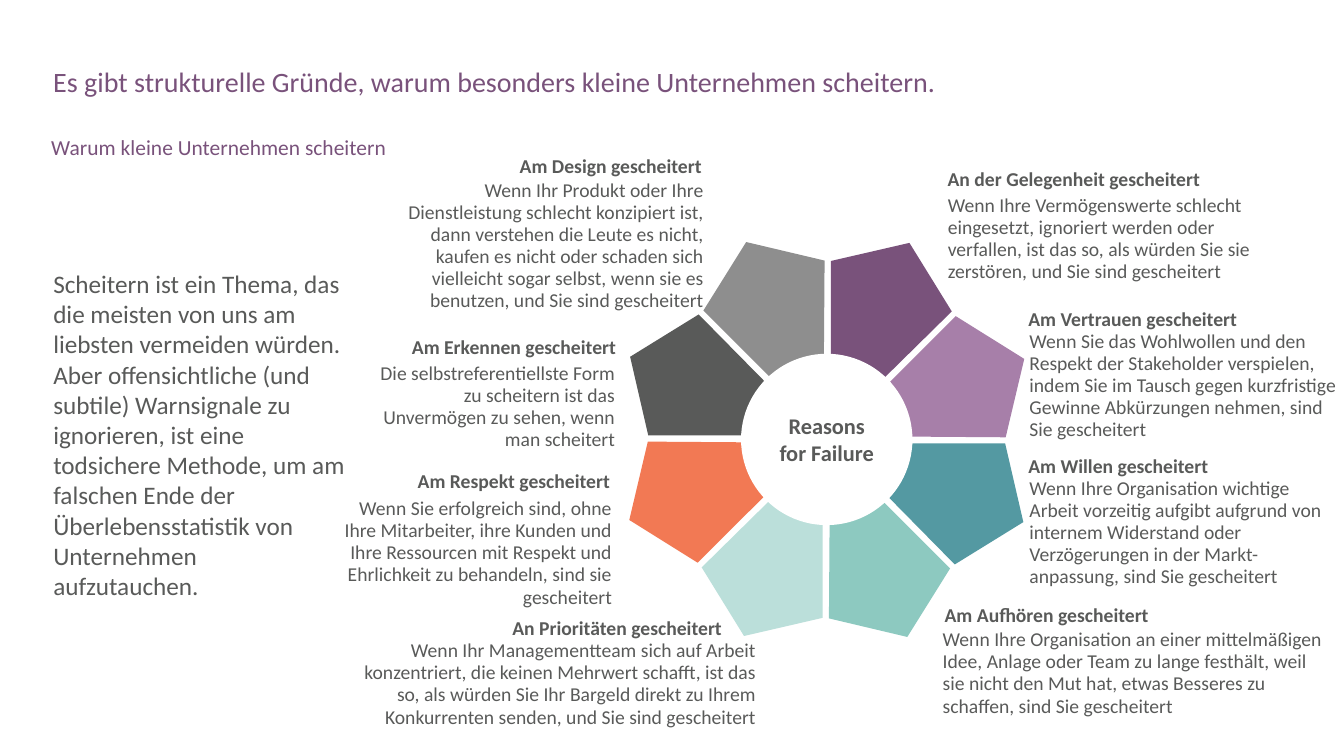
import math
from dataclasses import dataclass

import pptx
import pptx.dml.color
import pptx.enum.shapes
import pptx.enum.text
import pptx.util

PX = 9144  # EMU per px, 100 px to the inch
Align = pptx.enum.text.PP_ALIGN
Anchor = pptx.enum.text.MSO_ANCHOR


@dataclass(frozen=True)
class Theme:
    font: str = "Calibri"
    ink: str = "595A59"
    accent: str = "79527B"
    paper: str = "FFFFFF"
    # Clockwise from the top right
    wheel: tuple[str, ...] = ("79527B", "A77FA9", "5499A2", "8DC9C0",
                              "BBDFDA", "F27954", "595A59", "8E8E8E")
    title: float = 20
    subtitle: float = 15.3
    statement: float = 18
    hub: float = 16
    reason: float = 14


@dataclass(frozen=True)
class Box:
    left: int
    top: int
    width: int
    height: int

    def emu(self) -> tuple[int, int, int, int]:
        return self.left * PX, self.top * PX, self.width * PX, self.height * PX


@dataclass(frozen=True)
class Style:
    size: float
    color: str
    bold: bool = False
    align: Align = Align.LEFT
    anchor: Anchor = Anchor.TOP
    spacing: float = 1.0
    inset: tuple[int, int] = (10, 5)


@dataclass(frozen=True)
class Reason:
    heading: str
    heading_box: Box
    detail: str
    detail_box: Box
    align: Align


THEME = Theme()
HUB = (820, 436)
HUB_RADIUS = 85
# Top right segment, relative to the hub
SEGMENT = ((4, -177), (82, -195), (124, -127), (58, -62), (4, -85))

REASONS = (
    Reason("An der Gelegenheit gescheitert", Box(930, 160, 318, 34),
           "Wenn Ihre Vermögenswerte schlecht eingesetzt, ignoriert werden oder verfallen, "
           "ist das so, als würden Sie sie zerstören, und Sie sind gescheitert",
           Box(936, 191, 325, 92), Align.LEFT),
    Reason("Am Vertrauen gescheitert", Box(1010, 299, 245, 34),
           "Wenn Sie das Wohlwollen und den Respekt der Stakeholder verspielen, indem Sie im "
           "Tausch gegen kurzfristige Gewinne Abkürzungen nehmen, sind Sie gescheitert",
           Box(1017, 326, 325, 115), Align.LEFT),
    Reason("Am Willen gescheitert", Box(1010, 445, 219, 34),
           "Wenn Ihre Organisation wichtige Arbeit vorzeitig aufgibt aufgrund von internem "
           "Widerstand oder Verzögerungen in der Markt-anpassung, sind Sie gescheitert",
           Box(1017, 472, 303, 115), Align.LEFT),
    Reason("Am Aufhören gescheitert", Box(927, 592, 249, 34),
           "Wenn Ihre Organisation an einer mittelmäßigen Idee, Anlage oder Team zu lange "
           "festhält, weil sie nicht den Mut hat, etwas Besseres zu schaffen, sind Sie gescheitert",
           Box(931, 622, 389, 92), Align.LEFT),
    Reason("An Prioritäten gescheitert", Box(447, 605, 279, 34),
           "Wenn Ihr Managementteam sich auf Arbeit konzentriert, die keinen Mehrwert schafft, "
           "ist das so, als würden Sie Ihr Bargeld direkt zu Ihrem Konkurrenten senden, "
           "und Sie sind gescheitert",
           Box(351, 633, 403, 92), Align.RIGHT),
    Reason("Am Respekt gescheitert", Box(400, 459, 215, 34),
           "Wenn Sie erfolgreich sind, ohne Ihre Mitarbeiter, ihre Kunden und Ihre Ressourcen "
           "mit Respekt und Ehrlichkeit zu behandeln, sind sie gescheitert",
           Box(337, 492, 274, 115), Align.RIGHT),
    Reason("Am Erkennen gescheitert", Box(303, 327, 318, 34),
           "Die selbstreferentiellste Form zu scheitern ist das Unvermögen zu sehen, "
           "wenn man scheitert",
           Box(355, 358, 259, 92), Align.RIGHT),
    Reason("Am Design gescheitert", Box(501, 147, 205, 34),
           "Wenn Ihr Produkt oder Ihre Dienstleistung schlecht konzipiert ist, dann verstehen "
           "die Leute es nicht, kaufen es nicht oder schaden sich vielleicht sogar selbst, "
           "wenn sie es benutzen, und Sie sind gescheitert",
           Box(369, 176, 333, 137), Align.RIGHT),
)


def rgb(color: str) -> pptx.dml.color.RGBColor:
    return pptx.dml.color.RGBColor.from_string(color)


def write(shape, text: str, style: Style) -> None:
    frame = shape.text_frame
    frame.text = text
    frame.word_wrap = True
    frame.vertical_anchor = style.anchor
    side, edge = style.inset
    frame.margin_left = frame.margin_right = side * PX
    frame.margin_top = frame.margin_bottom = edge * PX
    paragraph = frame.paragraphs[0]
    paragraph.alignment = style.align
    paragraph.line_spacing = style.spacing
    font = paragraph.runs[0].font
    font.name = THEME.font
    font.size = pptx.util.Pt(style.size)
    font.bold = style.bold
    font.color.rgb = rgb(style.color)


def add_text(slide, box: Box, text: str, style: Style) -> None:
    write(slide.shapes.add_textbox(*box.emu()), text, style)


def paint(shape, color: str) -> None:
    shape.shadow.inherit = False
    shape.fill.solid()
    shape.fill.fore_color.rgb = rgb(color)
    shape.line.fill.background()


def add_segment(slide, index: int, color: str) -> None:
    angle = math.tau * index / len(THEME.wheel)
    cos, sin = math.cos(angle), math.sin(angle)
    corners = [(round((HUB[0] + x * cos - y * sin) * PX),
                round((HUB[1] + x * sin + y * cos) * PX)) for x, y in SEGMENT]
    outline = slide.shapes.build_freeform(*corners[0])
    outline.add_line_segments(corners[1:], close=True)
    paint(outline.convert_to_shape(), color)


def add_reason(slide, reason: Reason) -> None:
    add_text(slide, reason.heading_box, reason.heading,
             Style(THEME.reason, THEME.ink, bold=True, align=reason.align, anchor=Anchor.BOTTOM))
    add_text(slide, reason.detail_box, reason.detail,
             Style(THEME.reason, THEME.ink, align=reason.align, spacing=0.94, inset=(4, 2)))


def main() -> None:
    deck = pptx.Presentation()
    deck.slide_width, deck.slide_height = 1333 * PX, 750 * PX
    slide = deck.slides.add_slide(deck.slide_layouts[6])

    # Title, subtitle and statement
    add_text(slide, Box(43, 63, 1254, 64),
             "Es gibt strukturelle Gründe, warum besonders kleine Unternehmen scheitern.",
             Style(THEME.title, THEME.accent, spacing=0.9))
    add_text(slide, Box(41, 135, 1256, 28), "Warum kleine Unternehmen scheitern",
             Style(THEME.subtitle, THEME.accent, spacing=0.7))
    add_text(slide, Box(43, 179, 311, 504),
             "Scheitern ist ein Thema, das die meisten von uns am liebsten vermeiden würden. "
             "Aber offensichtliche (und subtile) Warnsignale zu ignorieren, ist eine todsichere "
             "Methode, um am falschen Ende der Überlebensstatistik von Unternehmen aufzutauchen.",
             Style(THEME.statement, THEME.ink, anchor=Anchor.MIDDLE))

    # Wheel, its inner edge rounded by the hub
    for index, color in enumerate(THEME.wheel):
        add_segment(slide, index, color)
    hub_box = Box(HUB[0] - HUB_RADIUS, HUB[1] - HUB_RADIUS, 2 * HUB_RADIUS, 2 * HUB_RADIUS)
    hub = slide.shapes.add_shape(pptx.enum.shapes.MSO_SHAPE.OVAL, *hub_box.emu())
    paint(hub, THEME.paper)
    write(hub, "Reasons for Failure",
          Style(THEME.hub, THEME.ink, bold=True, align=Align.CENTER, anchor=Anchor.MIDDLE))

    # Reasons around the wheel
    for reason in REASONS:
        add_reason(slide, reason)

    deck.save("out.pptx")


if __name__ == "__main__":
    main()
